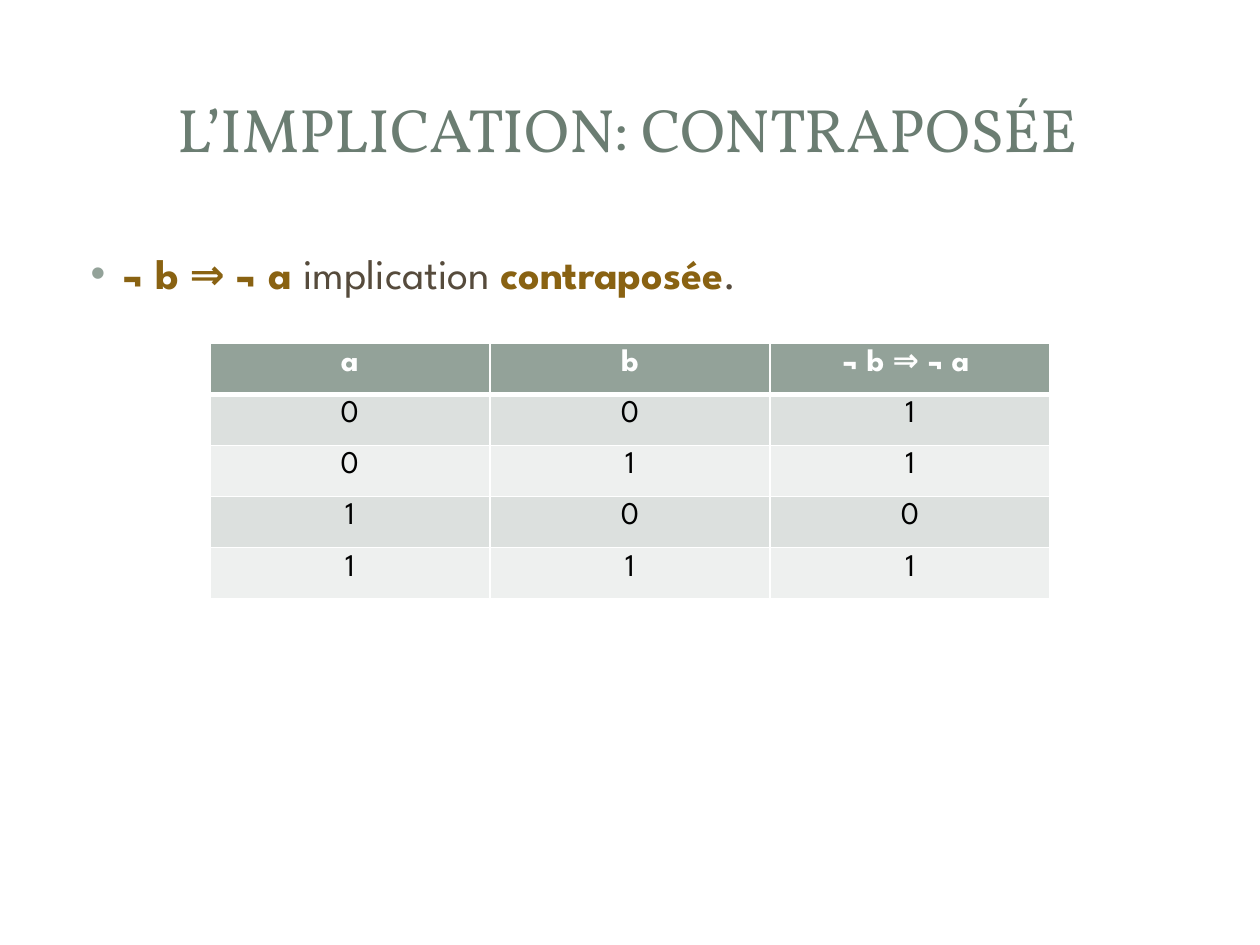
from itertools import product

from lxml import etree
from pptx import Presentation
from pptx.dml.color import RGBColor
from pptx.enum.shapes import MSO_SHAPE
from pptx.enum.text import MSO_ANCHOR, PP_ALIGN
from pptx.oxml.ns import qn
from pptx.util import Cm, Pt

RECT = MSO_SHAPE.RECTANGLE
ROUND = MSO_SHAPE.ROUNDED_RECTANGLE
CENTER = PP_ALIGN.CENTER
MIDDLE = MSO_ANCHOR.MIDDLE

WHITE = RGBColor(0xFF, 0xFF, 0xFF)
BLACK = RGBColor(0x00, 0x00, 0x00)
SLATE = RGBColor(0x6B, 0x7D, 0x72)
SAGE = RGBColor(0x93, 0xA2, 0x99)
GOLD = RGBColor(0x89, 0x62, 0x12)
BROWN = RGBColor(0x56, 0x4B, 0x3C)
BANDS = RGBColor(0xDC, 0xE0, 0xDE), RGBColor(0xEE, 0xF0, 0xEF)

SERIF = "Vollkorn"
SANS = "League Spartan"
HEAD = "a", "b", "¬ b ⇒ ¬ a "


def style(font, name, size, color, bold=False):
    font.name = name
    font.size = Pt(size)
    font.color.rgb = color
    font.bold = bold


def add_panel(slide, kind, left, top, width, height):
    panel = slide.shapes.add_shape(
        kind, Cm(left), Cm(top), Cm(width), Cm(height))
    panel.shadow.inherit = False
    panel.fill.solid()
    panel.fill.fore_color.rgb = WHITE
    panel.line.fill.background()
    return panel


def add_panels(slide):
    """Lay the page panel and the two title panels, one on another."""
    page = add_panel(slide, ROUND, 0.25, 0.28, 24.89, 18.52)
    page.adjustments[0] = 0.02
    band = add_panel(slide, RECT, 0.76, 0.76, 23.88, 3.68)
    tint = band.fill._xPr.find(qn("a:solidFill"))[0]
    etree.SubElement(tint, qn("a:alpha"), val="83000")
    add_panel(slide, RECT, 1.04, 1.04, 23.29, 3.1)


def add_title(slide, text):
    """Fill the title and bring it in front of the panels."""
    title = slide.shapes.title
    slide.shapes._spTree.append(title._element)
    title.left, title.top = Cm(1.19), Cm(1.14)
    title.width, title.height = Cm(22.94), Cm(2.9)
    frame = title.text_frame
    frame.text = text
    frame.vertical_anchor = MIDDLE
    para = frame.paragraphs[0]
    para.alignment = CENTER
    style(para.font, SERIF, 35, SLATE)


def add_bullet(para, color):
    props = para._p.get_or_add_pPr()
    props.set("marL", str(Cm(0.95)))
    props.set("indent", str(Cm(-0.64)))
    tint = etree.SubElement(props, qn("a:buClr"))
    etree.SubElement(tint, qn("a:srgbClr"), val=str(color))
    etree.SubElement(props, qn("a:buFont"), typeface="Arial")
    etree.SubElement(props, qn("a:buChar"), char="•")


def add_point(slide, parts):
    """Add a bulleted line from (text, is_key) parts."""
    box = slide.shapes.add_textbox(Cm(1.27), Cm(4.87), Cm(22.86), Cm(1.65))
    frame = box.text_frame
    frame.word_wrap = True
    para = frame.paragraphs[0]
    add_bullet(para, SAGE)
    para.space_before = Pt(4.8)
    for text, key in parts:
        run = para.add_run()
        run.text = text
        style(run.font, SANS, 24, GOLD if key else BROWN, key)


def add_borders(cell, roof, foot):
    """Draw white borders; roof and foot are top and bottom widths."""
    props = cell._tc.get_or_add_tcPr()
    widths = {"lnL": 1, "lnR": 1, "lnT": roof, "lnB": foot}
    for spot, (tag, width) in enumerate(widths.items()):
        line = etree.Element(qn(f"a:{tag}"), w=str(Pt(width)))
        fill = etree.SubElement(line, qn("a:solidFill"))
        etree.SubElement(fill, qn("a:srgbClr"), val=str(WHITE))
        props.insert(spot, line)


def fill_cell(cell, text, fill, color, bold):
    cell.text = text
    cell.fill.solid()
    cell.fill.fore_color.rgb = fill
    para = cell.text_frame.paragraphs[0]
    para.alignment = CENTER
    style(para.font, SANS, 18, color, bold)


def add_table(slide):
    rows = [HEAD]
    for a, b in product((0, 1), repeat=2):
        rows.append((a, b, int(b or not a)))
    frame = slide.shapes.add_table(
        len(rows), len(HEAD), Cm(4.23), Cm(6.92), Cm(16.94), Cm(5.15))
    for i, row in enumerate(rows):
        for j, value in enumerate(row):
            cell = frame.table.cell(i, j)
            if i == 0:
                fill_cell(cell, value, SAGE, WHITE, True)
            else:
                fill_cell(cell, str(value), BANDS[(i - 1) % 2], BLACK, False)
            add_borders(cell, 3 if i == 1 else 1, 3 if i == 0 else 1)


def main():
    deck = Presentation()
    deck.slide_width, deck.slide_height = Cm(25.4), Cm(19.05)
    slide = deck.slides.add_slide(deck.slide_layouts[5])
    add_panels(slide)
    add_title(slide, "L’IMPLICATION: CONTRAPOSÉE")
    add_point(slide, [("¬ b ⇒ ¬ a ", True), ("implication ", False),
                      ("contraposée", True), (".", False)])
    add_table(slide)
    deck.save("out.pptx")


if __name__ == "__main__":
    main()
